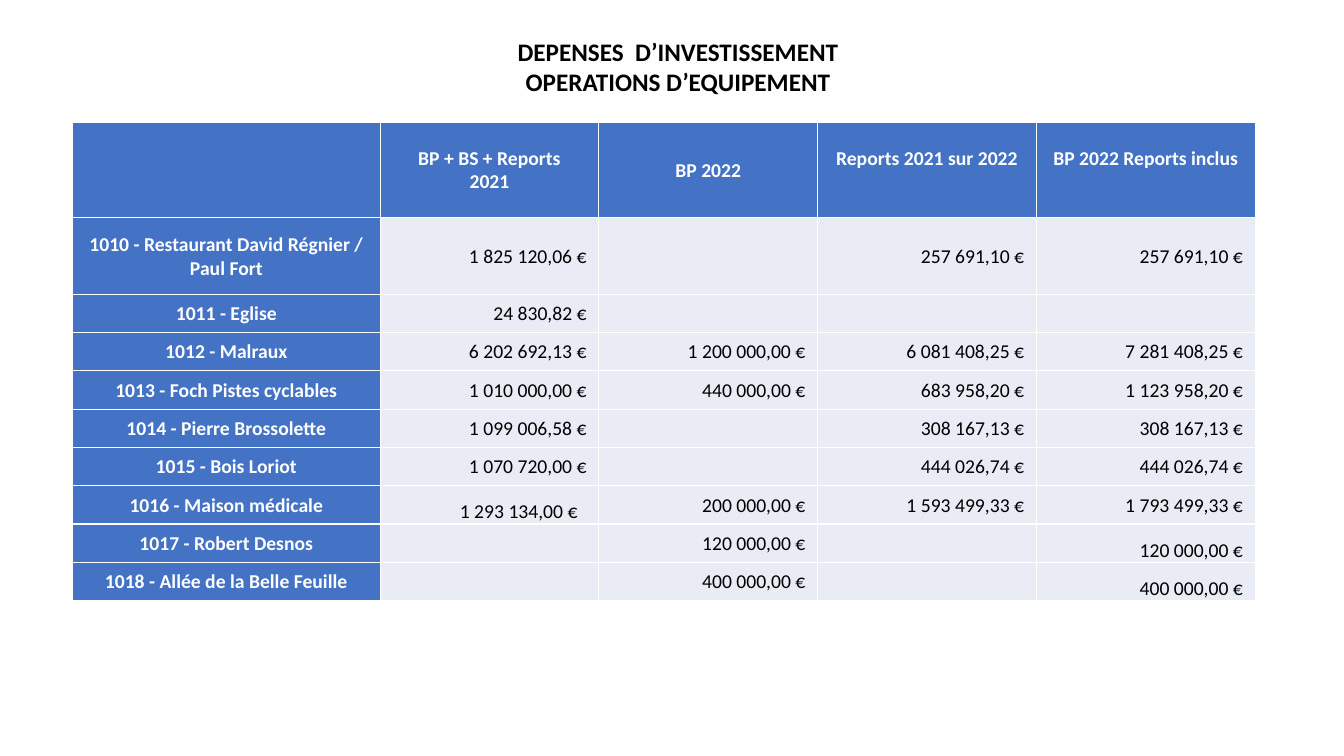
from dataclasses import dataclass
from typing import Optional

from lxml import etree
from pptx import Presentation
from pptx.dml.color import RGBColor
from pptx.enum.text import MSO_ANCHOR, PP_ALIGN
from pptx.oxml.ns import qn
from pptx.util import Inches, Pt

CENTER, RIGHT = PP_ALIGN.CENTER, PP_ALIGN.RIGHT
MIDDLE, BOTTOM = MSO_ANCHOR.MIDDLE, MSO_ANCHOR.BOTTOM


@dataclass(frozen=True)
class Theme:
    font: str = "Calibri"
    title_size: int = 18
    table_size: int = 14
    text: str = "000000"
    light: str = "FFFFFF"
    header: str = "4472C4"
    body: str = "E9EBF5"
    border_width: int = 1


@dataclass(frozen=True)
class Heading:
    text: str
    anchor: MSO_ANCHOR = MIDDLE
    bottom: float = 0


@dataclass(frozen=True)
class Operation:
    name: str
    budget_2021: Optional[float] = None
    budget_2022: Optional[float] = None
    carried: Optional[float] = None
    total: Optional[float] = None

    def amounts(self) -> tuple:
        return self.budget_2021, self.budget_2022, self.carried, self.total


THEME = Theme()
COLUMN_WIDTHS = [3.05] + [2.17] * 4
ROW_HEIGHTS = [0.95, 0.76] + [0.38] * 8
INSET = 0.01
AMOUNT_INSET = 0.12
TITLE = "DEPENSES  D’INVESTISSEMENT\nOPERATIONS D’EQUIPEMENT"

HEADINGS = [
    Heading(""),
    Heading("BP + BS + Reports\n2021"),
    Heading("BP 2022"),
    Heading("Reports 2021 sur 2022", BOTTOM, 0.47),
    Heading("BP 2022 Reports inclus", BOTTOM, 0.47),
]

OPERATIONS = [
    Operation("1010 - Restaurant David Régnier / Paul Fort", 1825120.06, None, 257691.10, 257691.10),
    Operation("1011 - Eglise", 24830.82),
    Operation("1012 - Malraux", 6202692.13, 1200000, 6081408.25, 7281408.25),
    Operation("1013 - Foch Pistes cyclables", 1010000, 440000, 683958.20, 1123958.20),
    Operation("1014 - Pierre Brossolette", 1099006.58, None, 308167.13, 308167.13),
    Operation("1015 - Bois Loriot", 1070720, None, 444026.74, 444026.74),
    Operation("1016 - Maison médicale", 1293134, 200000, 1593499.33, 1793499.33),
    Operation("1017 - Robert Desnos", None, 120000, None, 120000),
    Operation("1018 - Allée de la Belle Feuille", None, 400000, None, 400000),
]

LOW_CELLS = {(7, 1): 0.21, (8, 4): AMOUNT_INSET, (9, 4): AMOUNT_INSET}


def euros(value: Optional[float]) -> str:
    if value is None:
        return ""
    return f"{value:,.2f} €".replace(".", ";").replace(",", " ").replace(";", ",")


def write(tf, text: str, *, size: int, color: str, bold: bool = False, align=CENTER) -> None:
    for i, line in enumerate(text.split("\n")):
        p = tf.paragraphs[0] if i == 0 else tf.add_paragraph()
        p.alignment = align
        if line:
            r = p.add_run()
            r.text = line
            r.font.name = THEME.font
            r.font.size = Pt(size)
            r.font.bold = bold
            r.font.color.rgb = RGBColor.from_string(color)


def add_borders(cell) -> None:
    props = cell._tc.get_or_add_tcPr()
    for side in ("a:lnL", "a:lnR", "a:lnT", "a:lnB"):
        ln = etree.SubElement(props, qn(side), w=str(Pt(THEME.border_width)))
        fill = etree.SubElement(ln, qn("a:solidFill"))
        etree.SubElement(fill, qn("a:srgbClr"), val=THEME.light)


def fill_cell(cell, text: str, *, fill: str, color: str, bold: bool = False, align=CENTER,
              anchor=MIDDLE, right: float = INSET, bottom: float = 0) -> None:
    add_borders(cell)
    cell.fill.solid()
    cell.fill.fore_color.rgb = RGBColor.from_string(fill)
    cell.margin_left = cell.margin_top = Inches(INSET)
    cell.margin_right = Inches(right)
    cell.margin_bottom = Inches(bottom)
    cell.vertical_anchor = anchor
    write(cell.text_frame, text, size=THEME.table_size, color=color, bold=bold, align=align)


def add_title(s) -> None:
    tf = s.shapes.add_textbox(Inches(1.21), Inches(0), Inches(11.03), Inches(1.01)).text_frame
    tf.word_wrap = True
    tf.vertical_anchor = BOTTOM
    write(tf, TITLE, size=THEME.title_size, color=THEME.text, bold=True)


def add_budget_table(s) -> None:
    table = s.shapes.add_table(
        len(ROW_HEIGHTS), len(COLUMN_WIDTHS), Inches(0.72), Inches(1.21),
        Inches(sum(COLUMN_WIDTHS)), Inches(sum(ROW_HEIGHTS))).table
    table.horz_banding = False
    for column, width in zip(table.columns, COLUMN_WIDTHS):
        column.width = Inches(width)
    for row, height in zip(table.rows, ROW_HEIGHTS):
        row.height = Inches(height)

    label = dict(fill=THEME.header, color=THEME.light, bold=True)
    for c, heading in enumerate(HEADINGS):
        fill_cell(table.cell(0, c), heading.text, anchor=heading.anchor,
                  bottom=heading.bottom, **label)
    for r, operation in enumerate(OPERATIONS, 1):
        fill_cell(table.cell(r, 0), operation.name, **label)
        for c, value in enumerate(operation.amounts(), 1):
            fill_cell(table.cell(r, c), euros(value), fill=THEME.body, color=THEME.text,
                      align=RIGHT, anchor=BOTTOM if (r, c) in LOW_CELLS else MIDDLE,
                      right=LOW_CELLS.get((r, c), AMOUNT_INSET))


def main() -> None:
    prs = Presentation()
    prs.slide_width, prs.slide_height = Inches(13.33), Inches(7.5)
    s = prs.slides.add_slide(prs.slide_layouts[6])
    add_title(s)
    add_budget_table(s)
    prs.save("out.pptx")


if __name__ == "__main__":
    main()
